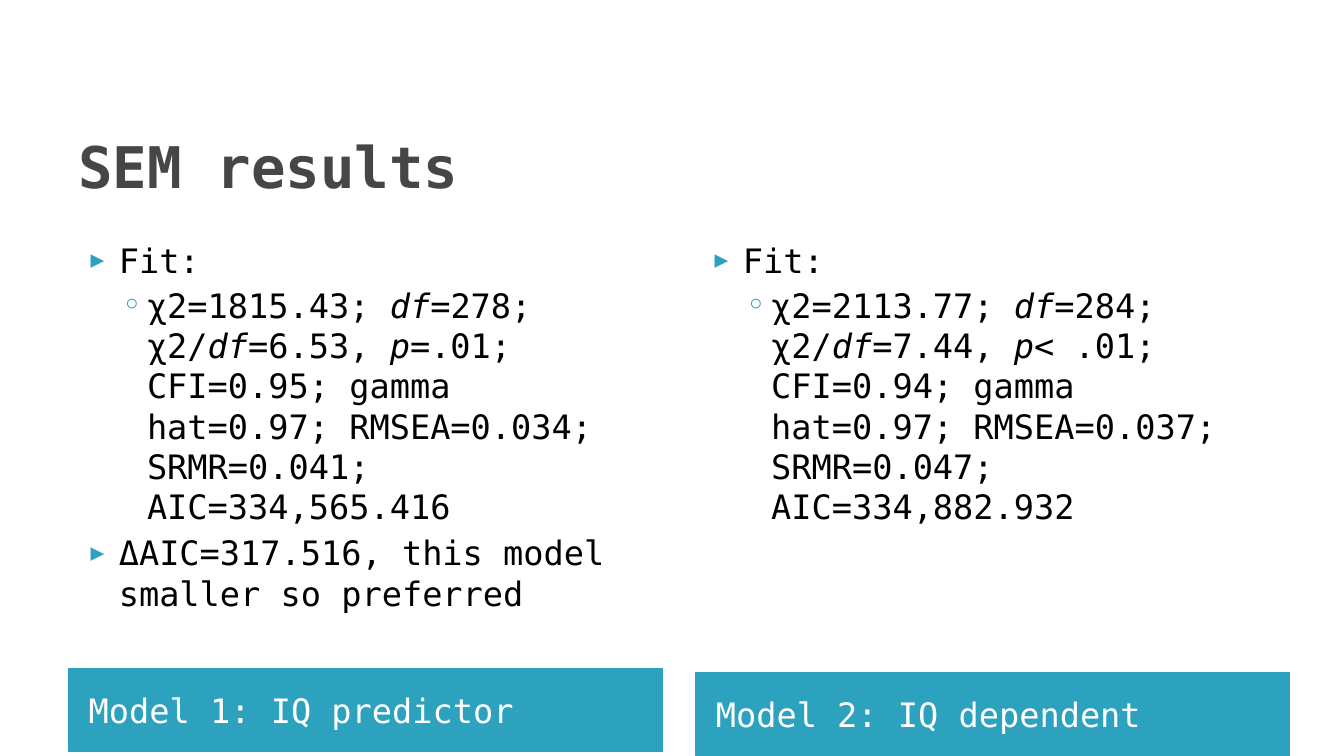
from lxml.etree import SubElement
from pptx import Presentation
from pptx.dml.color import RGBColor as RGB
from pptx.enum.shapes import MSO_SHAPE as SHAPE
from pptx.enum.text import MSO_ANCHOR as ANCHOR, PP_ALIGN as ALIGN
from pptx.oxml.ns import qn
from pptx.util import Inches, Pt

TEAL = RGB(0x2D, 0xA2, 0xBF)
GREY = RGB(0x46, 0x46, 0x46)
BLACK = RGB(0, 0, 0)
WHITE = RGB(255, 255, 255)
FACE = "DejaVu Sans Mono"

TITLE = "SEM results"
MODELS = [
    {
        "label": "Model 1: IQ predictor",
        "bar": (0.68, 6.63),
        "left": 0.68,
        "points": [
            (0, "Fit:"),
            (1, "χ2=1815.43; *df*=278; χ2/*df*=6.53, *p*=.01; CFI=0.95; gamma hat=0.97; "
                "RMSEA=0.034; SRMR=0.041; AIC=334,565.416"),
            (0, "ΔAIC=317.516, this model smaller so preferred"),
        ],
    },
    {
        "label": "Model 2: IQ dependent",
        "bar": (6.9, 6.67),
        "left": 6.87,
        "points": [
            (0, "Fit:"),
            (1, "χ2=2113.77; *df*=284; χ2/*df*=7.44, *p*< .01; CFI=0.94; gamma hat=0.97; "
                "RMSEA=0.037; SRMR=0.047; AIC=334,882.932"),
        ],
    },
]
LEVELS = [
    {"mark": "▶", "size": 68, "left": 0.4, "hang": -0.28, "gap": 4},
    {"mark": "◦", "size": 100, "left": 0.68, "hang": -0.25, "gap": 3.2},
]
WIDTH, TOP, DEEP, BAR = 5.89, 2.33, 4.31, 0.83

HEAD = {"size": Pt(41), "bold": True, "name": FACE}
BODY = {"size": Pt(24), "name": FACE}


def style(font, look, color):
    for key, value in look.items():
        setattr(font, key, value)
    font.color.rgb = color


def add_box(slide, *place):
    frame = slide.shapes.add_textbox(*map(Inches, place)).text_frame
    frame.word_wrap = True
    return frame


def add_mark(para, level):
    props = para._p.get_or_add_pPr()
    props.set("marL", str(Inches(level["left"])))
    props.set("indent", str(Inches(level["hang"])))
    tint = SubElement(props, qn("a:buClr"))
    SubElement(tint, qn("a:srgbClr"), val=str(TEAL))
    SubElement(props, qn("a:buSzPct"), val=str(level["size"] * 1000))
    SubElement(props, qn("a:buFont"), typeface=FACE)
    SubElement(props, qn("a:buChar"), char=level["mark"])


def add_points(slide, model):
    frame = add_box(slide, model["left"], TOP, WIDTH, DEEP)
    for i, (depth, text) in enumerate(model["points"]):
        para = frame.add_paragraph() if i else frame.paragraphs[0]
        level = LEVELS[depth]
        para.level = depth
        add_mark(para, level)
        if i:
            para.space_before = Pt(level["gap"])
        for j, part in enumerate(text.split("*")):
            run = para.add_run()
            run.text = part
            style(run.font, BODY, BLACK)
            run.font.italic = j % 2 == 1


def add_bar(slide, model):
    left, top = model["bar"]
    bar = slide.shapes.add_shape(SHAPE.RECTANGLE, *map(Inches, (left, top, WIDTH, BAR)))
    bar.shadow.inherit = False
    bar.fill.solid()
    bar.fill.fore_color.rgb = TEAL
    bar.line.color.rgb = TEAL
    bar.line.width = Pt(0.75)
    frame = bar.text_frame
    frame.word_wrap = True
    frame.margin_left = Inches(0.2)
    frame.vertical_anchor = ANCHOR.MIDDLE
    para = frame.paragraphs[0]
    para.alignment = ALIGN.LEFT
    para.text = model["label"]
    style(para.runs[0].font, BODY, WHITE)


def main():
    deck = Presentation()
    deck.slide_width, deck.slide_height = Inches(13.33), Inches(7.5)
    slide = deck.slides.add_slide(deck.slide_layouts[6])
    frame = add_box(slide, 0.68, 1.02, 12, 1.25)
    frame.vertical_anchor = ANCHOR.MIDDLE
    frame.text = TITLE
    style(frame.paragraphs[0].runs[0].font, HEAD, GREY)
    for draw in (add_bar, add_points):
        for model in MODELS:
            draw(slide, model)
    deck.save("out.pptx")


if __name__ == "__main__":
    main()
